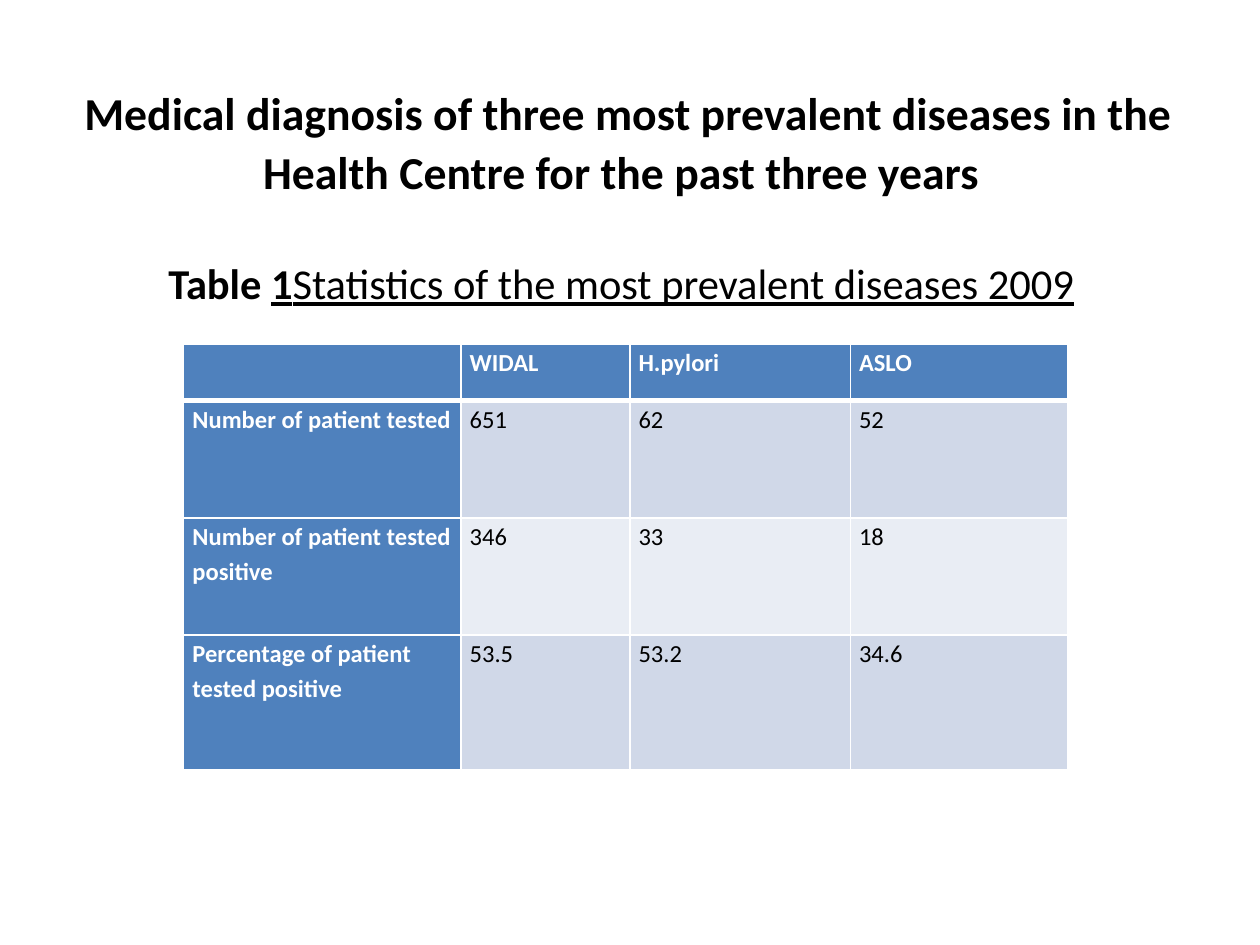
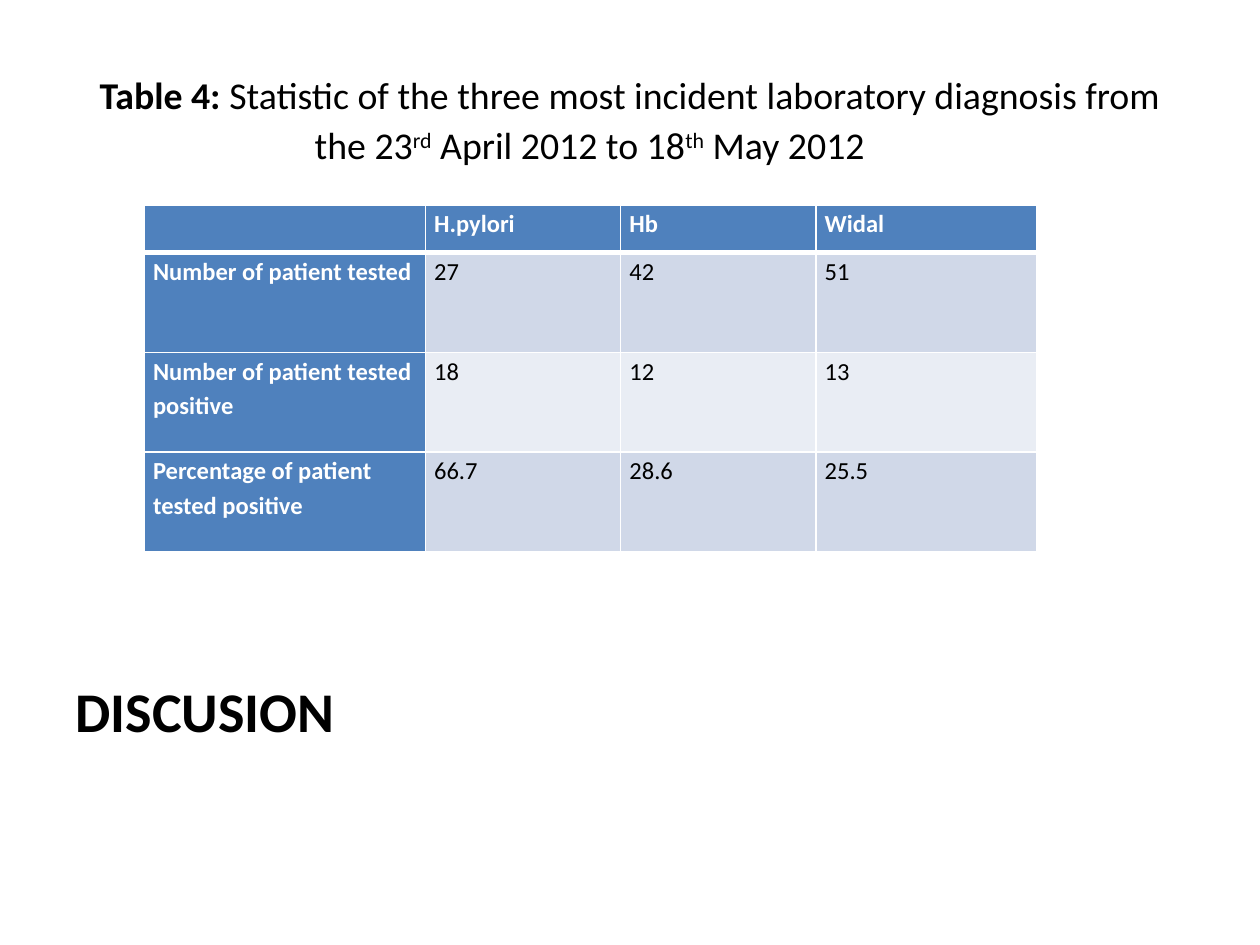
from lxml.etree import SubElement as Sub
from pptx import Presentation
from pptx.dml.color import RGBColor
from pptx.enum.text import MSO_ANCHOR as Anchor, PP_ALIGN as Align
from pptx.oxml.ns import qn
from pptx.util import Pt

BLACK = RGBColor(0x00, 0x00, 0x00)
WHITE = RGBColor(0xFF, 0xFF, 0xFF)
BLUE = RGBColor(0x4F, 0x81, 0xBD)
PALE = RGBColor(0xD0, 0xD8, 0xE8)
MIST = RGBColor(0xE9, 0xED, 0xF4)

FACE = "Calibri"
BOLD = {"bold": True}
LINED = {"underline": True}
LABEL = {"size": Pt(14), "bold": True}
VALUE = {"size": Pt(14), "bold": False}
SUPER = "30000"
HEADS = (
    "Number of patient tested",
    "Number of patient tested positive",
    "Percentage of patient tested positive",
)


def add_run(par, text, color=BLACK, **form):
    """Add a run with the given font values."""
    run = par.add_run()
    run.text = text
    run.font.color.rgb = color
    for key, val in {"name": FACE, **form}.items():
        setattr(run.font, key, val)
    return run


def add_text(slide, box, lines, size, align=Align.CENTER, anchor=Anchor.MIDDLE, pitch=None):
    """Add a text box whose lines are lists of (text, format) pairs."""
    frame = slide.shapes.add_textbox(*map(Pt, box)).text_frame
    frame.word_wrap = True
    frame.vertical_anchor = anchor
    for i, line in enumerate(lines):
        par = frame.add_paragraph() if i else frame.paragraphs[0]
        par.alignment = align
        if pitch:
            par.line_spacing = Pt(pitch)
        for text, form in line:
            add_run(par, text, **{"size": Pt(size), **form})
    return frame


def add_edge(cell, side, width):
    """Draw one white cell border."""
    edge = Sub(cell._tc.get_or_add_tcPr(), qn(f"a:{side}"), w=str(Pt(width)))
    fill = Sub(edge, qn("a:solidFill"))
    Sub(fill, qn("a:srgbClr"), val=str(WHITE))


def fill_cell(cell, text, row, col):
    """Style one cell by its place in the table and write its text."""
    head = row == 0 or col == 0
    for side in ("lnL", "lnR", "lnT", "lnB"):
        thick = (row, side) in ((0, "lnB"), (1, "lnT"))
        add_edge(cell, side, 3 if thick else 1)
    cell.fill.solid()
    cell.fill.fore_color.rgb = BLUE if head else (PALE if row % 2 else MIST)
    pads = {"margin_left": 5, "margin_right": 5, "margin_top": 0, "margin_bottom": 0}
    for key, val in pads.items():
        setattr(cell, key, Pt(val))
    par = cell.text_frame.paragraphs[0]
    par.line_spacing = 1.15
    if text:
        add_run(par, text, WHITE if head else BLACK, **(LABEL if head else VALUE))


def add_stats(slide, spot, widths, heights, tests, values):
    """Add the table of tests, with one column for each test."""
    rows = [("", *tests)] + [(head, *row) for head, row in zip(HEADS, values)]
    box = (*spot, sum(widths), sum(heights))
    grid = slide.shapes.add_table(len(rows), len(widths), *map(Pt, box)).table
    grid.first_col = True
    for col, width in zip(grid.columns, widths):
        col.width = Pt(width)
    for line, height in zip(grid.rows, heights):
        line.height = Pt(height)
    for r, row in enumerate(rows):
        for c, text in enumerate(row):
            fill_cell(grid.cell(r, c), text, r, c)


def build_year(slide):
    """Build the slide with the figures for 2009."""
    title = "Medical diagnosis of three most prevalent diseases in the Health Centre for the past three years"
    frame = add_text(slide, (31, 26, 648, 108), [[(title, BOLD)]], 26.1, pitch=33.7)
    frame.paragraphs[0]._p.get_or_add_pPr().set("indent", str(Pt(8)))
    note = [
        ("Table ", BOLD),
        ("1", {**BOLD, **LINED}),
        ("Statistics of the most prevalent diseases 2009", LINED),
    ]
    add_text(slide, (31, 139, 648, 45), [note], 24.3)
    add_stats(
        slide, (105, 196.6), (158.4, 96.5, 126, 124), (32.4, 67, 67, 77),
        ("WIDAL", "H.pylori", "ASLO"),
        (("651", "62", "52"), ("346", "33", "18"), ("53.5", "53.2", "34.6")),
    )


def build_month(slide):
    """Build the slide with the figures for April to May 2012."""
    add_stats(
        slide, (82.5, 117), (160.6, 111.6, 111.6, 126), (27.4, 57, 57, 57),
        ("H.pylori", "Hb", "Widal"),
        (("27", "42", "51"), ("18", "12", "13"), ("66.7", "28.6", "25.5")),
    )
    lines = [
        [("Table 4: ", BOLD), ("Statistic of the three most incident laboratory diagnosis from", {})],
        [("the 23", {}), ("rd", {}), (" April 2012 to 18", {}), ("th", {}), (" May 2012", {})],
    ]
    frame = add_text(slide, (36, 21.6, 648, 90), lines, 21.6, pitch=29.1)
    last = frame.paragraphs[1]
    last._p.get_or_add_pPr().set("marR", str(Pt(46)))
    for run in last.runs[1::2]:
        run.font._element.set("baseline", SUPER)
    add_text(slide, (36, 383, 641.5, 98.6), [[("DISCUSION", BOLD)]], 32, Align.LEFT, Anchor.TOP)


def main():
    """Build both slides and save the file."""
    deck = Presentation()
    deck.slide_width, deck.slide_height = Pt(720), Pt(540)
    for build in (build_year, build_month):
        build(deck.slides.add_slide(deck.slide_layouts[6]))
    deck.save("out.pptx")


if __name__ == "__main__":
    main()
